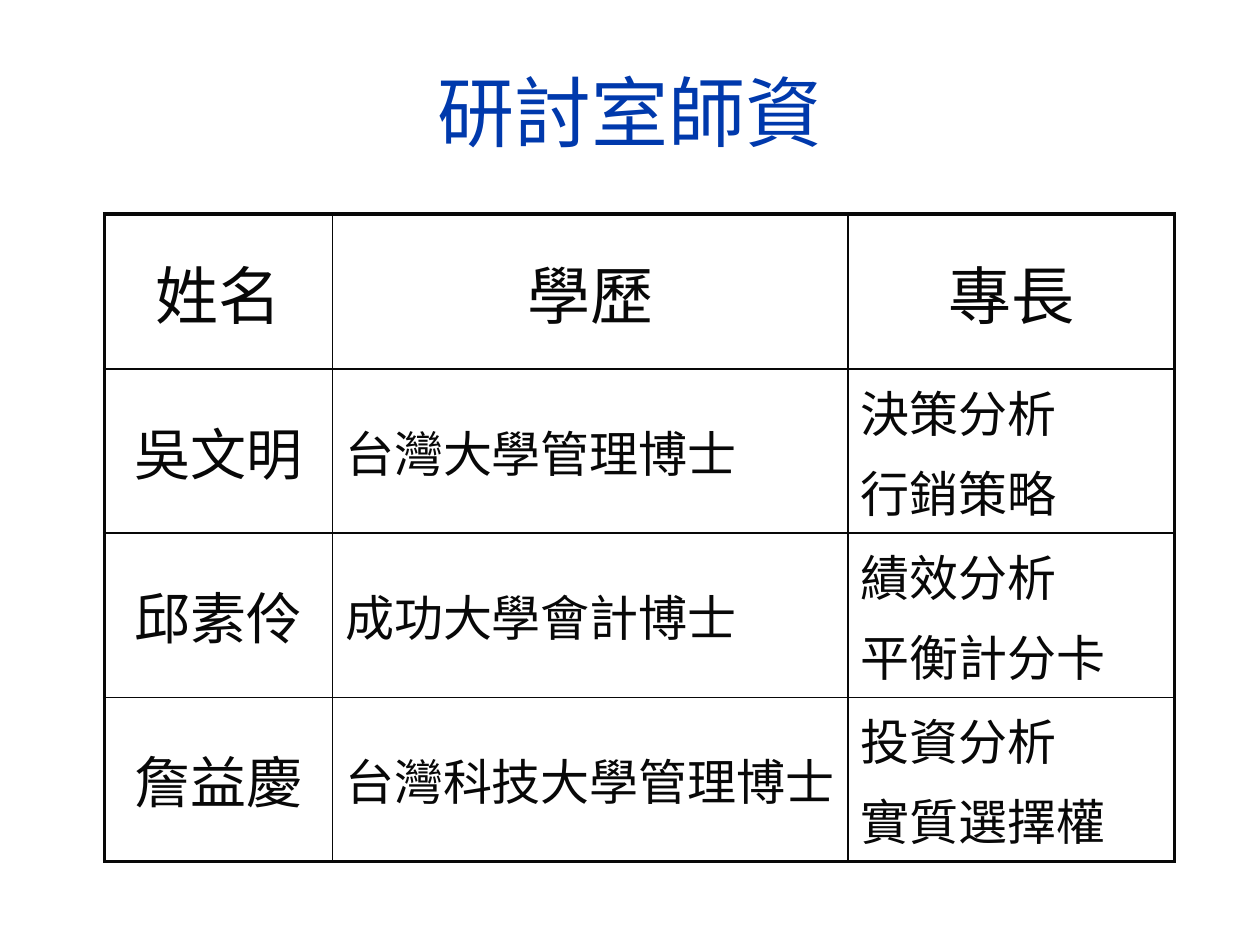
from lxml.etree import SubElement
from pptx import Presentation
from pptx.dml.color import RGBColor
from pptx.enum.text import MSO_ANCHOR, MSO_AUTO_SIZE, PP_ALIGN
from pptx.oxml.ns import qn
from pptx.util import Inches, Pt

THEME = dict(font="Arial", blue="0039AC", ink="080808",
             title=44, head=36, name=32, body=28, thin=1, thick=2.25)


def write(frame, text, size, color=THEME["ink"], align=PP_ALIGN.LEFT):
    """Fill a text frame, one paragraph per line of text."""
    frame.text = text
    for i, para in enumerate(frame.paragraphs):
        para.alignment = align
        if i:
            para.space_before = Pt(size * 0.2)
        for run in para.runs:
            font = run.font
            font.name, font.size, font.bold = THEME["font"], Pt(size), False
            font.color.rgb = RGBColor.from_string(color)


def edge(cell, side, width):
    """Draw one border of a cell."""
    line = SubElement(cell._tc.get_or_add_tcPr(), qn("a:ln" + side),
                      w=str(Pt(width)), cap="flat", cmpd="sng")
    fill = SubElement(line, qn("a:solidFill"))
    SubElement(fill, qn("a:srgbClr"), val=THEME["ink"])


# Slide
deck = Presentation()
deck.slide_width, deck.slide_height = Inches(10), Inches(7.5)
slide = deck.slides.add_slide(deck.slide_layouts[5])

# Title
title = slide.shapes.title
title.left, title.top = Inches(0.33), Inches(0.25)
title.width, title.height = Inches(9.34), Inches(1.25)
frame = title.text_frame
frame.vertical_anchor = MSO_ANCHOR.MIDDLE
frame.auto_size = MSO_AUTO_SIZE.NONE
write(frame, "研討室師資", THEME["title"], color=THEME["blue"],
      align=PP_ALIGN.CENTER)

# Table grid
rows = [
    ("姓名", "學歷", "專長"),
    ("吳文明", "台灣大學管理博士", "決策分析\n行銷策略"),
    ("邱素伶", "成功大學會計博士", "績效分析\n平衡計分卡"),
    ("詹益慶", "台灣科技大學管理博士", "投資分析\n實質選擇權"),
]
cols = [1.81, 4.09, 2.59]
high = 1.23
table = slide.shapes.add_table(
    len(rows), len(cols), Inches(0.83), Inches(1.7),
    Inches(sum(cols)), Inches(high * len(rows))).table
table.first_row = table.horz_banding = False
for col, width in zip(table.columns, cols):
    col.width = Inches(width)
for row in table.rows:
    row.height = Inches(high)

# Cells: thick outer frame, thin inner rules
for r, row in enumerate(rows):
    for c, text in enumerate(row):
        cell = table.cell(r, c)
        outer = {"L": c == 0, "R": c == len(cols) - 1,
                 "T": r == 0, "B": r == len(rows) - 1}
        for side, thick in outer.items():
            edge(cell, side, THEME["thick" if thick else "thin"])
        cell.fill.background()
        cell.vertical_anchor = MSO_ANCHOR.MIDDLE
        kind = "head" if r == 0 else "name" if c == 0 else "body"
        write(cell.text_frame, text, THEME[kind],
              align=PP_ALIGN.LEFT if kind == "body" else PP_ALIGN.CENTER)

deck.save("out.pptx")
